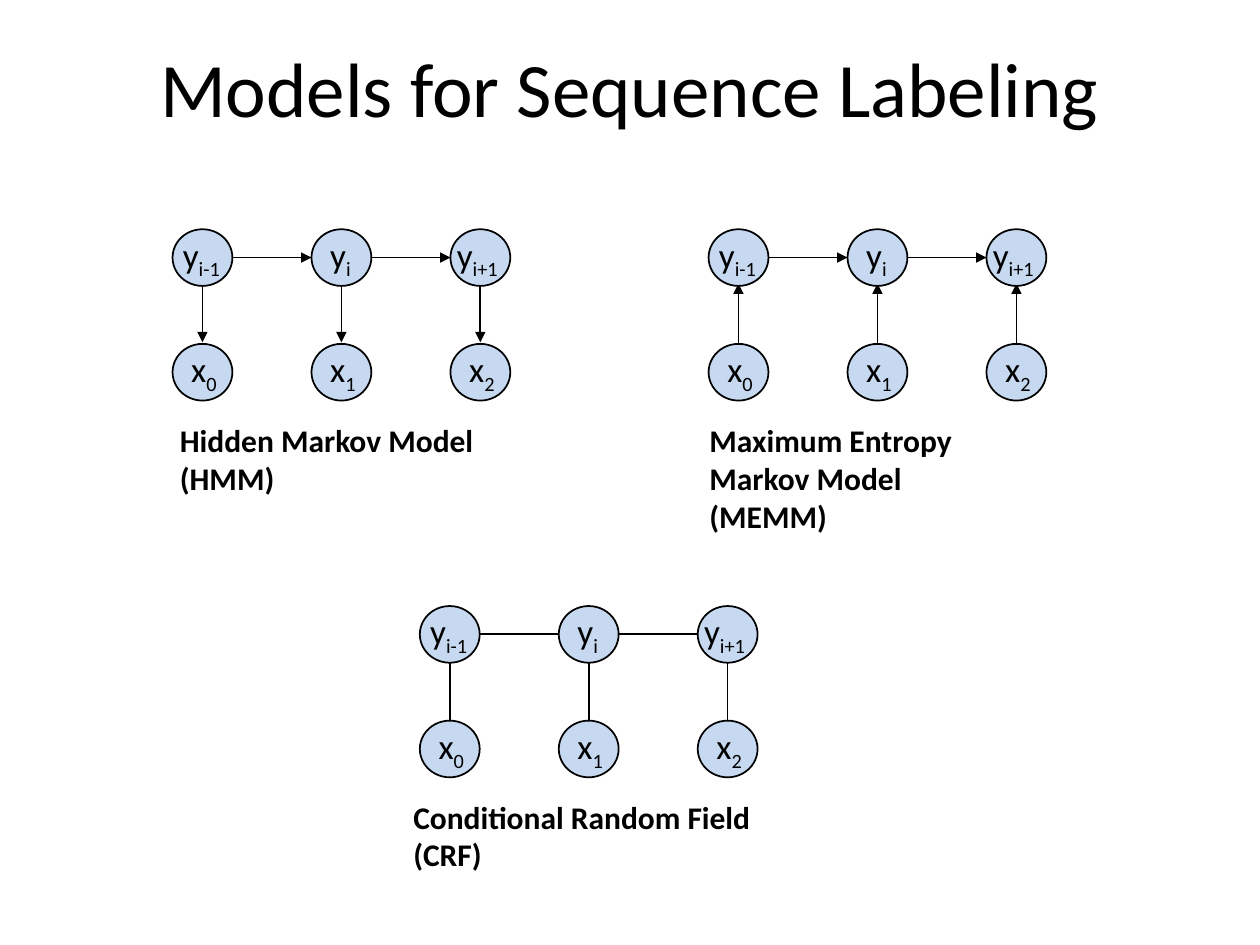
"""Draw three graphical models for sequence labeling on one slide."""
from dataclasses import dataclass

from lxml import etree
from pptx import Presentation
from pptx import util as u
from pptx.dml.color import RGBColor
from pptx.enum import shapes, text
from pptx.oxml.ns import qn

Pt = u.Pt
FONT, INK, BLUE = "Calibri", "000000", "C6D9F1"
WIDE, HIGH = 34.2, 32.4
STEP, DROP = 79.4, 65.5


@dataclass(frozen=True)
class Label:
    base: str
    sub: str
    shift: float
    width: float


@dataclass(frozen=True)
class Model:
    left: float
    top: float
    lines: tuple[str, ...]
    shift: float
    width: float
    ends: tuple[float, float]
    arrow: bool


ROWS = (
    (Label("y", "i-1", -1.2, 37.4), Label("y", "i", 3.6, 26.6),
     Label("y", "i+1", -3.4, 40.3)),
    tuple(Label("x", str(i), 3.6, 30.2) for i in range(3)),
)

MODELS = (
    Model(239.9, 346.3, ("Conditional Random Field", "(CRF)"),
          -10.8, 213.1, (32.4, 72), False),
    Model(404.9, 131, ("Maximum Entropy", "Markov Model", "(MEMM)"),
          -6.6, 158.4, (64.8, 31), True),
    Model(98.6, 131, ("Hidden Markov Model", "(HMM)"),
          -2.9, 183.6, (31, 64.6), True),
)


def color(code: str) -> RGBColor:
    return RGBColor.from_string(code)


def add_run(para, words: str, size: float, bold: bool = False, sub: bool = False) -> None:
    run = para.add_run()
    run.text = words
    run.font.name = FONT
    run.font.size = Pt(size)
    run.font.bold = bold
    run.font.color.rgb = color(INK)
    if sub:
        run.font._element.set("baseline", "-25000")


def add_box(host, left: float, top: float, width: float, height: float):
    frame = host.add_textbox(Pt(left), Pt(top), Pt(width), Pt(height)).text_frame
    frame.word_wrap = False
    frame.auto_size = text.MSO_AUTO_SIZE.SHAPE_TO_FIT_TEXT
    return frame


def add_line(host, start: tuple[float, float], end: tuple[float, float], arrow: bool) -> None:
    line = host.add_connector(shapes.MSO_CONNECTOR.STRAIGHT, *map(Pt, start + end))
    line.line.color.rgb = color(INK)
    line.line.width = Pt(1)
    if arrow:
        etree.SubElement(line.line._get_or_add_ln(), qn("a:tailEnd"), type="triangle")
    etree.SubElement(line._element.spPr, qn("a:effectLst"))


def add_node(host, left: float, top: float, label: Label) -> None:
    node = host.add_shape(shapes.MSO_SHAPE.OVAL, Pt(left), Pt(top), Pt(WIDE), Pt(HIGH))
    node.shadow.inherit = False
    node.fill.solid()
    node.fill.fore_color.rgb = color(BLUE)
    node.line.color.rgb = color(INK)
    node.line.width = Pt(1)
    para = add_box(host, left + label.shift, top - 1.4, label.width, 31.5).paragraphs[0]
    add_run(para, label.base, 20)
    add_run(para, label.sub, 20, sub=True)


def add_model(slide, model: Model) -> None:
    host = slide.shapes.add_group_shape().shapes
    lefts = [model.left + i * STEP for i in range(3)]
    start, end = (model.top + y for y in model.ends)
    for left in lefts:
        mid = left + WIDE / 2
        add_line(host, (mid, start), (mid, end), model.arrow)
    for i, row in enumerate(ROWS):
        for left, label in zip(lefts, row):
            add_node(host, left, model.top + i * DROP, label)
    level = model.top + HIGH / 2
    for left, right in zip(lefts, lefts[1:]):
        add_line(host, (left + WIDE, level), (right, level), model.arrow)
    height = 7.6 + 21.8 * len(model.lines)
    frame = add_box(host, model.left + model.shift, model.top + 106, model.width, height)
    for i, words in enumerate(model.lines):
        para = frame.add_paragraph() if i else frame.paragraphs[0]
        add_run(para, words, 18, bold=True)


def add_title(slide, words: str) -> None:
    frame = add_box(slide.shapes, 36, 4.3, 648, 90)
    frame.word_wrap = True
    frame.auto_size = text.MSO_AUTO_SIZE.NONE
    frame.vertical_anchor = text.MSO_ANCHOR.MIDDLE
    para = frame.paragraphs[0]
    para.alignment = text.PP_ALIGN.CENTER
    add_run(para, words, 44)


def main() -> None:
    deck = Presentation()
    deck.slide_width, deck.slide_height = Pt(720), Pt(540)
    slide = deck.slides.add_slide(deck.slide_layouts[6])
    add_title(slide, "Models for Sequence Labeling")
    for model in MODELS:
        add_model(slide, model)
    deck.save("out.pptx")


if __name__ == "__main__":
    main()
